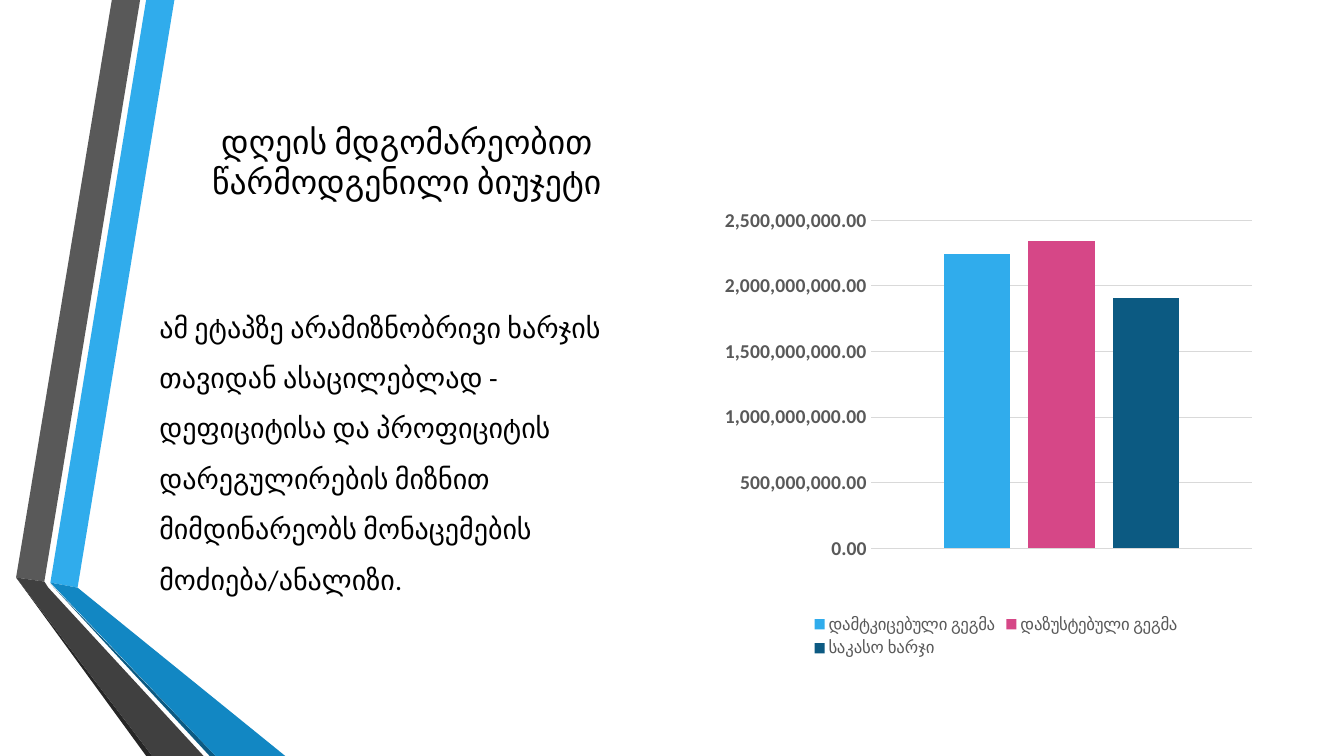
from dataclasses import dataclass

from lxml import etree
from pptx import Presentation
from pptx import util as u
from pptx.chart import data as chart_data
from pptx.dml import color
from pptx.enum import chart as chart_enum
from pptx.enum import text
from pptx.oxml import ns


@dataclass(frozen=True)
class Theme:
    font: str = "Calibri"
    ink: str = "000000"
    muted: str = "595959"
    grid: str = "D9D9D9"
    sky: str = "30ACEC"
    blue: str = "1287C3"
    navy: str = "0C5A82"
    pink: str = "D64787"
    charcoal: str = "404040"
    black: str = "262626"
    title_size: int = 24
    body_size: int = 20
    axis_size: int = 14
    legend_size: int = 12


THEME = Theme()

RIBBONS = [
    (THEME.sky, [(0.5, 5.78), (0.77, 5.83), (1.73, 0), (1.45, 0)]),
    (THEME.muted, [(1.39, 0), (1.11, 0), (0.16, 5.73), (0.44, 5.77)]),
    (THEME.black, [(0.16, 5.73), (1.45, 7.5), (1.51, 7.5)]),
    (THEME.navy, [(0.5, 5.79), (2.08, 7.5), (2.14, 7.5)]),
    (THEME.blue, [(0.5, 5.78), (2.14, 7.5), (2.83, 7.5), (0.77, 5.83)]),
    (THEME.charcoal, [(2.02, 7.5), (0.48, 5.83), (0.44, 5.77), (0.16, 5.73), (1.51, 7.5)]),
]

BUDGET = [
    ("დამტკიცებული გეგმა", 2240000000, THEME.sky),
    ("დაზუსტებული გეგმა", 2340000000, THEME.pink),
    ("საკასო ხარჯი", 1910000000, THEME.navy),
]


def rgb(value):
    return color.RGBColor.from_string(value)


def format_font(font, size, fill, bold=False):
    font.name = THEME.font
    font.size = u.Pt(size)
    font.bold = bold
    font.color.rgb = rgb(fill)


def write_text(shape, content, *, size, anchor, align, line_spacing=1.0, before=0, after=0):
    frame = shape.text_frame
    frame.text = content
    frame.word_wrap = True
    frame.auto_size = text.MSO_AUTO_SIZE.NONE
    frame.vertical_anchor = anchor
    paragraph = frame.paragraphs[0]
    paragraph.alignment = align
    paragraph.line_spacing = line_spacing
    paragraph.space_before = u.Pt(before)
    paragraph.space_after = u.Pt(after)
    format_font(paragraph.runs[0].font, size, THEME.ink)
    return paragraph


def remove_bullet(paragraph):
    properties = paragraph._p.get_or_add_pPr()
    properties.set("marL", "0")
    properties.set("indent", "0")
    etree.SubElement(properties, ns.qn("a:buNone"))


def place(shape, left, top, width, height):
    shape.left, shape.top = u.Inches(left), u.Inches(top)
    shape.width, shape.height = u.Inches(width), u.Inches(height)


def add_ribbon(slide, fill, points):
    builder = slide.shapes.build_freeform(
        u.Inches(points[0][0]), u.Inches(points[0][1]), scale=1.0
    )
    builder.add_line_segments([(u.Inches(x), u.Inches(y)) for x, y in points[1:]])
    shape = builder.convert_to_shape()
    shape.shadow.inherit = False
    shape.fill.solid()
    shape.fill.fore_color.rgb = rgb(fill)
    shape.line.fill.background()


def set_plot_layout(chart, left, top, width, height):
    plot_area = chart._chartSpace.chart.plotArea
    for existing in plot_area.findall(ns.qn("c:layout")):
        plot_area.remove(existing)
    layout = etree.Element(ns.qn("c:layout"))
    manual = etree.SubElement(layout, ns.qn("c:manualLayout"))
    settings = {
        "layoutTarget": "inner", "xMode": "edge", "yMode": "edge",
        "x": left, "y": top, "w": width, "h": height,
    }
    for name, value in settings.items():
        etree.SubElement(manual, ns.qn(f"c:{name}")).set("val", str(value))
    plot_area.insert(0, layout)


def format_value_axis(axis):
    axis.minimum_scale = 0
    axis.maximum_scale = 2500000000
    axis.major_unit = 500000000
    axis.major_tick_mark = chart_enum.XL_TICK_MARK.NONE
    axis.minor_tick_mark = chart_enum.XL_TICK_MARK.NONE
    axis.format.line.fill.background()
    axis.has_major_gridlines = True
    axis.major_gridlines.format.line.color.rgb = rgb(THEME.grid)
    axis.major_gridlines.format.line.width = u.Pt(0.75)
    axis.tick_labels.number_format = "#,##0.00"
    axis.tick_labels.number_format_is_linked = False
    format_font(axis.tick_labels.font, THEME.axis_size, THEME.muted, bold=True)


def add_budget_chart(slide):
    data = chart_data.CategoryChartData(number_format="#,##0.00")
    data.categories = ["1"]
    for name, value, _ in BUDGET:
        data.add_series(name, [value])
    chart = slide.shapes.add_chart(
        chart_enum.XL_CHART_TYPE.COLUMN_CLUSTERED,
        u.Inches(7.18), u.Inches(2.05), u.Inches(5.4), u.Inches(4.52), data,
    ).chart
    format_font(chart.font, THEME.legend_size, THEME.muted)
    chart.has_title = False
    chart.has_legend = True
    chart.legend.position = chart_enum.XL_LEGEND_POSITION.BOTTOM
    chart.legend.include_in_layout = False
    format_font(chart.legend.font, THEME.legend_size, THEME.muted)
    chart.category_axis.visible = False
    format_value_axis(chart.value_axis)
    plot = chart.plots[0]
    plot.vary_by_categories = False
    plot.gap_width = 219
    plot.overlap = -27
    for series, (_, _, fill) in zip(plot.series, BUDGET):
        series.format.fill.solid()
        series.format.fill.fore_color.rgb = rgb(fill)
    set_plot_layout(chart, 0.27, 0.03, 0.7, 0.72)


def main():
    presentation = Presentation()
    presentation.slide_width = u.Inches(13.33)
    presentation.slide_height = u.Inches(7.5)
    slide = presentation.slides.add_slide(presentation.slide_layouts[1])

    for fill, points in RIBBONS:
        add_ribbon(slide, fill, points)

    title, body = slide.placeholders
    place(title, 1.75, 0.6, 4.57, 1.45)
    write_text(
        title, "დღეის მდგომარეობით წარმოდგენილი ბიუჯეტი",
        size=THEME.title_size, anchor=text.MSO_ANCHOR.BOTTOM, align=text.PP_ALIGN.CENTER,
    )
    place(body, 1.48, 2.2, 4.85, 4.42)
    paragraph = write_text(
        body,
        "ამ ეტაპზე არამიზნობრივი ხარჯის თავიდან ასაცილებლად - დეფიციტისა და "
        "პროფიციტის დარეგულირების მიზნით მიმდინარეობს მონაცემების მოძიება/ანალიზი.",
        size=THEME.body_size, anchor=text.MSO_ANCHOR.MIDDLE, align=text.PP_ALIGN.LEFT,
        line_spacing=1.5, before=4, after=6,
    )
    remove_bullet(paragraph)
    add_budget_chart(slide)
    presentation.save("out.pptx")


if __name__ == "__main__":
    main()
